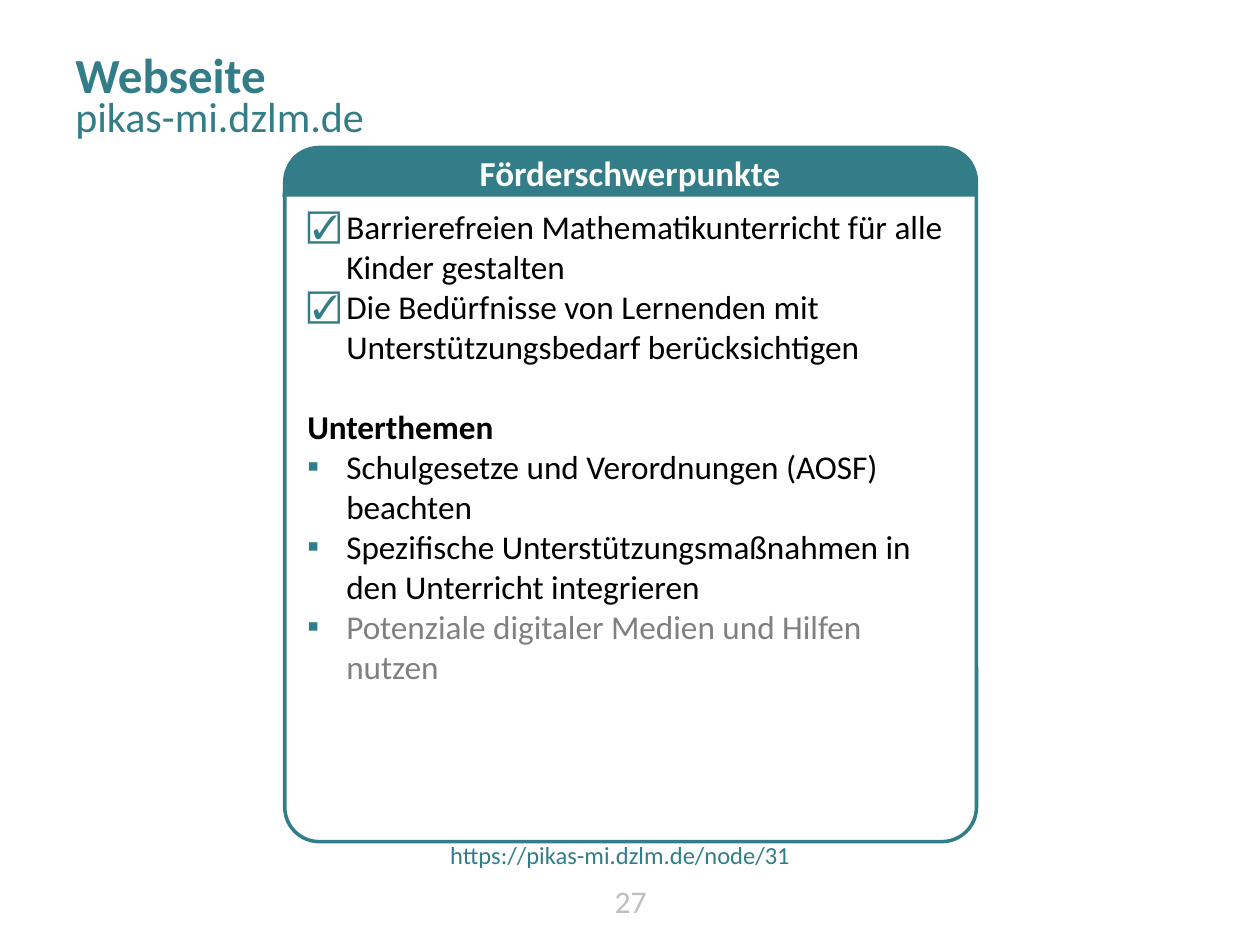
import math

import pptx
import pptx.dml.color
import pptx.enum.shapes
import pptx.enum.text
import pptx.util
from lxml import etree
from pptx.oxml.ns import qn

Inches = pptx.util.Inches
Pt = pptx.util.Pt
ALIGN = pptx.enum.text.PP_ALIGN
ANCHOR = pptx.enum.text.MSO_ANCHOR

COLORS = {
    "teal": "327D87",
    "white": "FFFFFF",
    "black": "000000",
    "gray": "808080",
    "page": "BFBFBF",
    "space": "222222",
}

# Content
HEADER = "Förderschwerpunkte"
# text, bullet, bold, color, space before in points
PANEL_TEXT = [
    ("Barrierefreien Mathematikunterricht für alle Kinder gestalten", "☑", False, "black", 0),
    ("Die Bedürfnisse von Lernenden mit Unterstützungsbedarf berücksichtigen", "☑", False, "black", 0),
    ("Unterthemen", None, True, "black", 23),
    ("Schulgesetze und Verordnungen (AOSF) beachten", "▪", False, "black", 0),
    ("Spezifische Unterstützungsmaßnahmen in den Unterricht integrieren", "▪", False, "black", 0),
    ("Potenziale digitaler Medien und Hilfen nutzen", "▪", False, "gray", 0),
]
# text, box, size, color, bold, alignment, anchor, top inset
LABELS = [
    ("27", (3.42, 6.95, 3.17, 0.4), 18, "page", False, ALIGN.CENTER, ANCHOR.MIDDLE, 0.05),
    ("Webseite", (0.5, 0.3, 9, 0.42), 28, "teal", True, ALIGN.LEFT, ANCHOR.TOP, 0.05),
    ("pikas-mi.dzlm.de", (0.5, 0.72, 9, 0.77), 24, "teal", False, ALIGN.LEFT, ANCHOR.TOP, 0),
]
ADDRESS = "https://pikas-mi.dzlm.de/node/31"
ADDRESS_BOX = (3.41, 6.56, 2.99, 0.4)

# Panel geometry
LEFT, TOP, WIDTH, HEIGHT = 2.26, 1.17, 5.49, 5.51
HEADER_HEIGHT, HEADER_RADIUS = 0.39, 0.24


def rgb(name):
    return pptx.dml.color.RGBColor.from_string(COLORS[name])


def fill_shape(shape, color):
    shape.shadow.inherit = False
    shape.fill.solid()
    shape.fill.fore_color.rgb = rgb(color)


def format_font(font, size, color, bold=False, name="Calibri"):
    font.size, font.bold, font.name = Pt(size), bold, name
    font.color.rgb = rgb(color)


def add_bullet(paragraph, character):
    properties = paragraph._p.get_or_add_pPr()
    properties.set("marL", str(Inches(0.31)))
    properties.set("indent", str(-Inches(0.31)))
    bullet_color = etree.SubElement(properties, qn("a:buClr"))
    etree.SubElement(bullet_color, qn("a:srgbClr"), val=COLORS["teal"])
    etree.SubElement(properties, qn("a:buFont"), typeface="Calibri")
    etree.SubElement(properties, qn("a:buChar"), char=character)


def header_outline():
    """Points of a band with round upper corners, clockwise from lower left."""
    right = LEFT + WIDTH
    points = [(LEFT - 0.02, TOP + HEADER_HEIGHT)]
    for center, start in ((LEFT + HEADER_RADIUS, 180), (right - HEADER_RADIUS, 270)):
        for degrees in range(start, start + 91, 6):
            angle = math.radians(degrees)
            points.append((center + HEADER_RADIUS * math.cos(angle),
                           TOP + HEADER_RADIUS * (1 + math.sin(angle))))
    points.append((right + 0.01, TOP + HEADER_HEIGHT))
    return [(Inches(x), Inches(y)) for x, y in points]


presentation = pptx.Presentation()
presentation.slide_width, presentation.slide_height = Inches(10), Inches(7.5)
slide = presentation.slides.add_slide(presentation.slide_layouts[6])
group = slide.shapes.add_group_shape()

# Panel with bulleted text
panel = group.shapes.add_shape(
    pptx.enum.shapes.MSO_SHAPE.ROUNDED_RECTANGLE,
    *map(Inches, (LEFT, TOP, WIDTH, HEIGHT)))
panel.adjustments[0] = 0.05
fill_shape(panel, "white")
panel.line.color.rgb = rgb("teal")
panel.line.width = Pt(2)
frame = panel.text_frame
frame.word_wrap = True
frame.vertical_anchor = ANCHOR.TOP
frame.margin_top = Inches(HEADER_HEIGHT)
frame.text = "\n".join(item[0] for item in PANEL_TEXT)
for paragraph, (_, bullet, bold, color, gap) in zip(frame.paragraphs, PANEL_TEXT):
    paragraph.alignment = ALIGN.LEFT
    paragraph.space_before = Pt(gap)
    if bullet:
        add_bullet(paragraph, bullet)
    format_font(paragraph.runs[0].font, 19, color, bold)

# Panel header
start, *rest = header_outline()
builder = group.shapes.build_freeform(*start)
builder.add_line_segments(rest, close=True)
header = builder.convert_to_shape()
fill_shape(header, "teal")
header.line.fill.background()
header.text_frame.text = HEADER
header.text_frame.vertical_anchor = ANCHOR.MIDDLE
header.text_frame.paragraphs[0].alignment = ALIGN.CENTER
format_font(header.text_frame.paragraphs[0].runs[0].font, 20, "white", True)

# Page number, title and subtitle
for text, box, size, color, bold, alignment, anchor, inset in LABELS:
    frame = slide.shapes.add_textbox(*map(Inches, box)).text_frame
    frame.word_wrap = True
    frame.vertical_anchor = anchor
    frame.margin_top = Inches(inset)
    frame.text = text
    frame.paragraphs[0].alignment = alignment
    format_font(frame.paragraphs[0].runs[0].font, size, color, bold)

# Web address, led by a no-break space
frame = slide.shapes.add_textbox(*map(Inches, ADDRESS_BOX)).text_frame
frame.word_wrap = False
frame.auto_size = pptx.enum.text.MSO_AUTO_SIZE.SHAPE_TO_FIT_TEXT
frame.text = " "
format_font(frame.paragraphs[0].runs[0].font, 18, "space", name="Open Sans")
run = frame.paragraphs[0].add_run()
run.text = ADDRESS
format_font(run.font, 14, "teal")

presentation.save("out.pptx")
